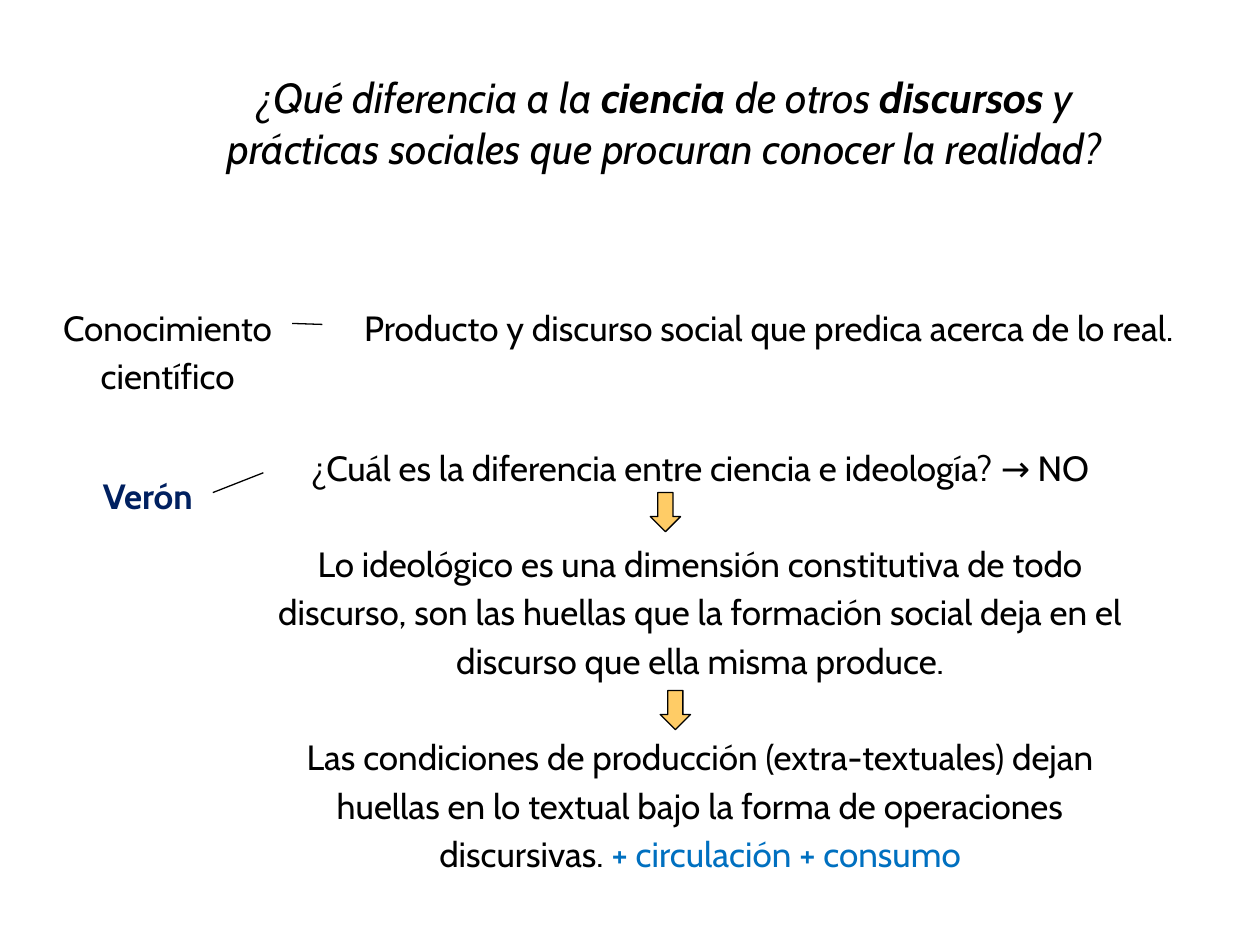
import pptx
import pptx.util
import pptx.dml.color
import pptx.enum.shapes
import pptx.enum.text
import lxml.etree
from pptx.util import Cm, Pt

COLORS = {"text": "000000", "author": "002060", "accent": "0070C0", "arrow": "FFCC66"}
NS = "http://schemas.openxmlformats.org/drawingml/2006/main"


def rgb(name):
    return pptx.dml.color.RGBColor.from_string(COLORS[name])


def fill_text(sp, box, paragraphs, size=20, spacing=1.15):
    """Place sp at box and write paragraphs, each a list of (text, color, bold, italic)."""
    sp.left, sp.top, sp.width, sp.height = [Cm(v) for v in box]
    tf = sp.text_frame
    tf.word_wrap = True
    tf.auto_size = pptx.enum.text.MSO_AUTO_SIZE.NONE
    tf.vertical_anchor = pptx.enum.text.MSO_ANCHOR.TOP
    for i, runs in enumerate(paragraphs):
        p = tf.add_paragraph() if i else tf.paragraphs[0]
        p.alignment = pptx.enum.text.PP_ALIGN.CENTER
        p.line_spacing = spacing
        p.space_before = Pt(27.5 if i else 0)
        for text, color, bold, italic in runs:
            r = p.add_run()
            r.text = text
            r.font.name = "Cabin"
            r.font.size = Pt(size)
            r.font.bold = bold
            r.font.italic = italic
            r.font.color.rgb = rgb(color)


prs = pptx.Presentation()
prs.slide_width, prs.slide_height = Cm(25.4), Cm(19.05)
s = prs.slides.add_slide(prs.slide_layouts[1])

# Title question
fill_text(s.shapes.title, (3.3, 1.32, 20.2, 3.86), [[
    ("¿Qué diferencia a la ", "text", False, True),
    ("ciencia", "text", True, True),
    (" de otros ", "text", False, True),
    ("discursos", "text", True, True),
    (" y prácticas sociales que procuran conocer la realidad?", "text", False, True),
]], size=24, spacing=1.0)

# Concepts and definition
labels = [
    ("Conocimiento científico", (0.69, 5.92, 5.38, 2.24), "text", False),
    ("Verón", (0.3, 9.32, 5.36, 1.14), "author", True),
    ("Producto y discurso social que predica acerca de lo real.",
     (6.5, 5.92, 18.01, 1.24), "text", False),
]
for text, box, color, bold in labels:
    sp = s.shapes.add_textbox(0, 0, 0, 0)
    fill_text(sp, box, [[(text, color, bold, False)]])
definition = sp

# Chain of arguments
body = s.placeholders[1]
fill_text(body, (5.11, 8.74, 18.01, 10.08), [
    [("¿Cuál es la diferencia entre ciencia e ideología? → NO", "text", False, False)],
    [("Lo ideológico es una dimensión constitutiva de todo discurso, son las huellas "
      "que la formación social deja en el discurso que ella misma produce.",
      "text", False, False)],
    [("Las condiciones de producción (extra-textuales) dejan huellas en lo textual "
      "bajo la forma de operaciones discursivas. ", "text", False, False),
     ("+ circulación + consumo", "accent", False, False)],
])
for p in body.text_frame.paragraphs:
    pPr = p._p.get_or_add_pPr()
    pPr.set("marL", "0")
    pPr.set("indent", "0")
    lxml.etree.SubElement(pPr, f"{{{NS}}}buNone")

# Lines from the concepts
links = []
for ends in [(5.89, 6.52, 6.5, 6.54), (4.29, 9.93, 5.31, 9.53)]:
    link = s.shapes.add_connector(
        pptx.enum.shapes.MSO_CONNECTOR.STRAIGHT, *[Cm(v) for v in ends])
    link.line.color.rgb = rgb("text")
    link.line.width = Pt(0.75)
    lxml.etree.SubElement(link._element.spPr, f"{{{NS}}}effectLst")
    links.append(link)
links[0].end_connect(definition, 1)

# Arrows between the arguments
for left, top in [(13.11, 9.93), (13.31, 13.92)]:
    arrow = s.shapes.add_shape(
        pptx.enum.shapes.MSO_SHAPE.DOWN_ARROW, Cm(left), Cm(top), Cm(0.61), Cm(0.79))
    arrow.shadow.inherit = False
    arrow.fill.solid()
    arrow.fill.fore_color.rgb = rgb("arrow")
    arrow.line.color.rgb = rgb("text")
    arrow.line.width = Pt(0.75)

prs.save("out.pptx")
